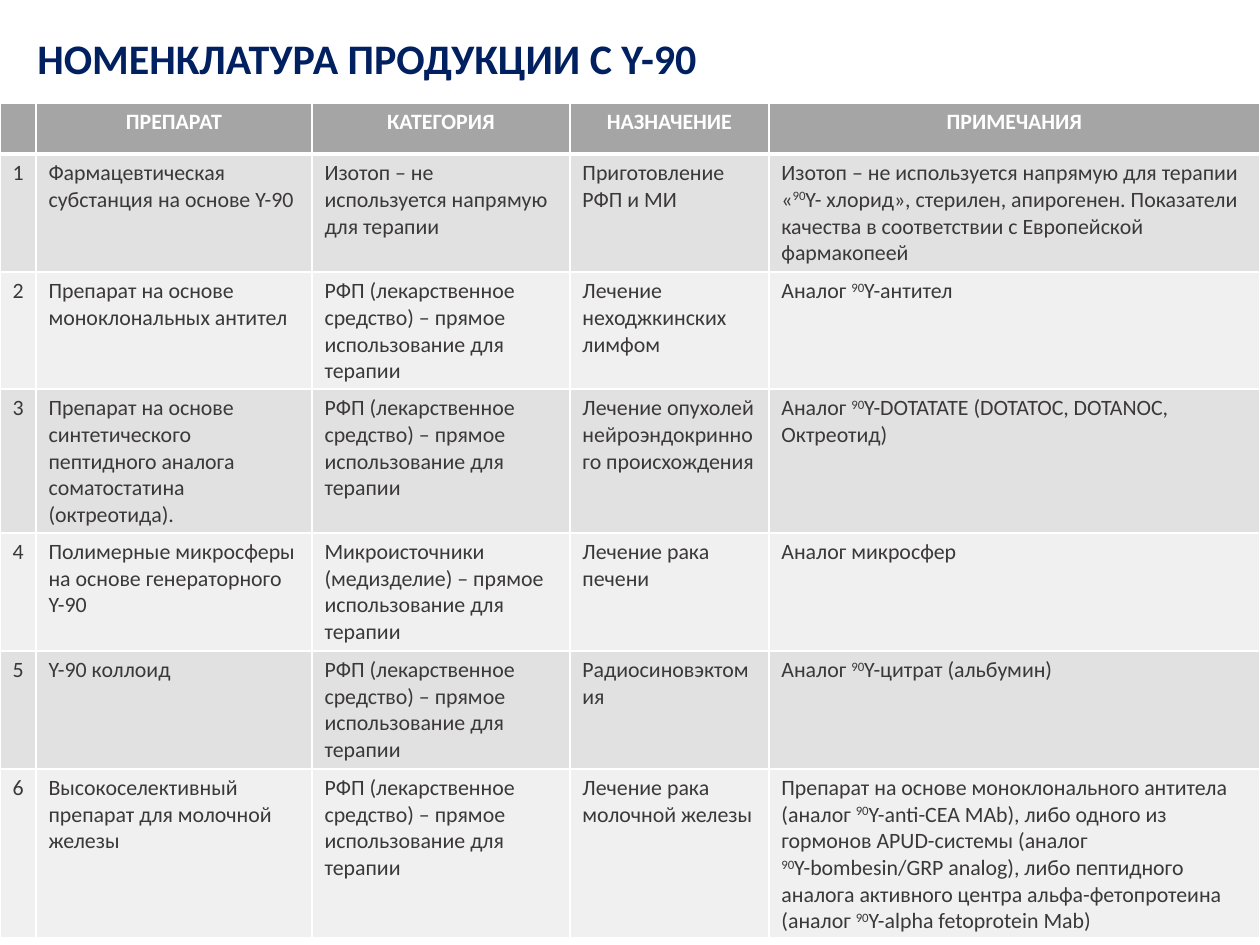
from dataclasses import dataclass
from lxml.etree import SubElement
from pptx import Presentation
from pptx.dml.color import RGBColor
from pptx.enum.text import PP_ALIGN
from pptx.oxml.ns import qn
from pptx.util import Pt

TITLE = "НОМЕНКЛАТУРА ПРОДУКЦИИ С Y-90"
HEADERS = ("", "ПРЕПАРАТ", "КАТЕГОРИЯ", "НАЗНАЧЕНИЕ", "ПРИМЕЧАНИЯ")
DRUG = "РФП (лекарственное средство) – прямое использование для терапии"
SUPERSCRIPT = "^"
PRODUCTS = [
    ("Фармацевтическая субстанция на основе Y-90",
     "Изотоп – не используется напрямую для терапии",
     "Приготовление РФП и МИ",
     "Изотоп – не используется напрямую для терапии\n"
     "«^90^Y- хлорид», стерилен, апирогенен. Показатели качества "
     "в соответствии с Европейской фармакопеей"),
    ("Препарат на основе моноклональных антител", DRUG,
     "Лечение неходжкинских лимфом", "Аналог ^90^Y-антител"),
    ("Препарат на основе синтетического пептидного аналога соматостатина (октреотида).",
     DRUG, "Лечение опухолей нейроэндокринного происхождения",
     "Аналог ^90^Y-DOTATATE (DOTATOC, DOTANOC, Октреотид)"),
    ("Полимерные микросферы на основе генераторного Y-90",
     "Микроисточники (медизделие) – прямое использование для терапии",
     "Лечение рака печени", "Аналог микросфер"),
    ("Y-90 коллоид", DRUG, "Радиосиновэктомия", "Аналог ^90^Y-цитрат (альбумин)"),
    ("Высокоселективный препарат для молочной железы", DRUG,
     "Лечение рака молочной железы",
     "Препарат на основе моноклонального антитела (аналог ^90^Y-anti-CEA MAb), "
     "либо одного из гормонов APUD-системы (аналог ^90^Y-bombesin/GRP analog), "
     "либо пептидного аналога активного центра альфа-фетопротеина "
     "(аналог ^90^Y-alpha fetoprotein Mab)"),
]
COLUMN_WIDTHS = (36, 276, 258, 199, 491)
ROW_HEIGHTS = (51, 118, 117, 144, 118, 118, 169)


@dataclass(frozen=True)
class Theme:
    font: str = "Calibri"
    title: str = "002060"
    header: str = "A5A5A5"
    bands: tuple = ("E1E1E1", "F0F0F0")
    body: str = "3B3838"
    white: str = "FFFFFF"
    title_size: float = 24
    table_size: float = 12.5
    border: int = 1
    header_border: int = 3


THEME = Theme()


def px(length):
    return round(length * 914400 / 126)


def style(font, size, color, bold=False):
    font.name = THEME.font
    font.size = Pt(size)
    font.bold = bold
    font.color.rgb = RGBColor.from_string(color)


def write_line(para, line, color, bold):
    for index, part in enumerate(line.split(SUPERSCRIPT)):
        span = para.add_run()
        span.text = part
        style(span.font, THEME.table_size, color, bold)
        if index % 2:
            span.font._element.set("baseline", "30000")


def add_borders(cell, top, bottom):
    properties = cell._tc.get_or_add_tcPr()
    widths = {"lnL": THEME.border, "lnR": THEME.border, "lnT": top, "lnB": bottom}
    for tag, width in widths.items():
        line = SubElement(properties, qn(f"a:{tag}"), w=str(Pt(width)))
        SubElement(SubElement(line, qn("a:solidFill")), qn("a:srgbClr"), val=THEME.white)


def fill_cell(cell, text, row, column):
    is_header = row == 0
    add_borders(cell,
                THEME.header_border if row == 1 else THEME.border,
                THEME.header_border if is_header else THEME.border)
    cell.fill.solid()
    fill = THEME.header if is_header else THEME.bands[(row - 1) % 2]
    cell.fill.fore_color.rgb = RGBColor.from_string(fill)
    cell.margin_top, cell.margin_bottom = px(6), px(3)
    color = THEME.white if is_header else THEME.body
    frame = cell.text_frame
    for index, line in enumerate(text.split("\n")):
        para = frame.add_paragraph() if index else frame.paragraphs[0]
        centered = is_header or column == 0
        para.alignment = PP_ALIGN.CENTER if centered else PP_ALIGN.LEFT
        if line:
            write_line(para, line, color, is_header)


def add_title(page):
    box = page.shapes.add_textbox(px(25), px(26), px(1160), px(79))
    box.text_frame.word_wrap = True
    para = box.text_frame.paragraphs[0]
    para.text = TITLE
    para.space_after = Pt(6)
    style(para.runs[0].font, THEME.title_size, THEME.title, True)


def add_product_table(page):
    rows = [HEADERS] + [(str(number), *product)
                        for number, product in enumerate(PRODUCTS, 1)]
    table = page.shapes.add_table(len(rows), len(HEADERS), 0, px(103),
                                  px(sum(COLUMN_WIDTHS)), px(sum(ROW_HEIGHTS))).table
    for column, width in zip(table.columns, COLUMN_WIDTHS):
        column.width = px(width)
    for row, height in zip(table.rows, ROW_HEIGHTS):
        row.height = px(height)
    for row, texts in enumerate(rows):
        for column, text in enumerate(texts):
            fill_cell(table.cell(row, column), text, row, column)


def main():
    deck = Presentation()
    deck.slide_width, deck.slide_height = px(1260), px(945)
    page = deck.slides.add_slide(deck.slide_layouts[6])
    add_title(page)
    add_product_table(page)
    deck.save("out.pptx")


if __name__ == "__main__":
    main()
